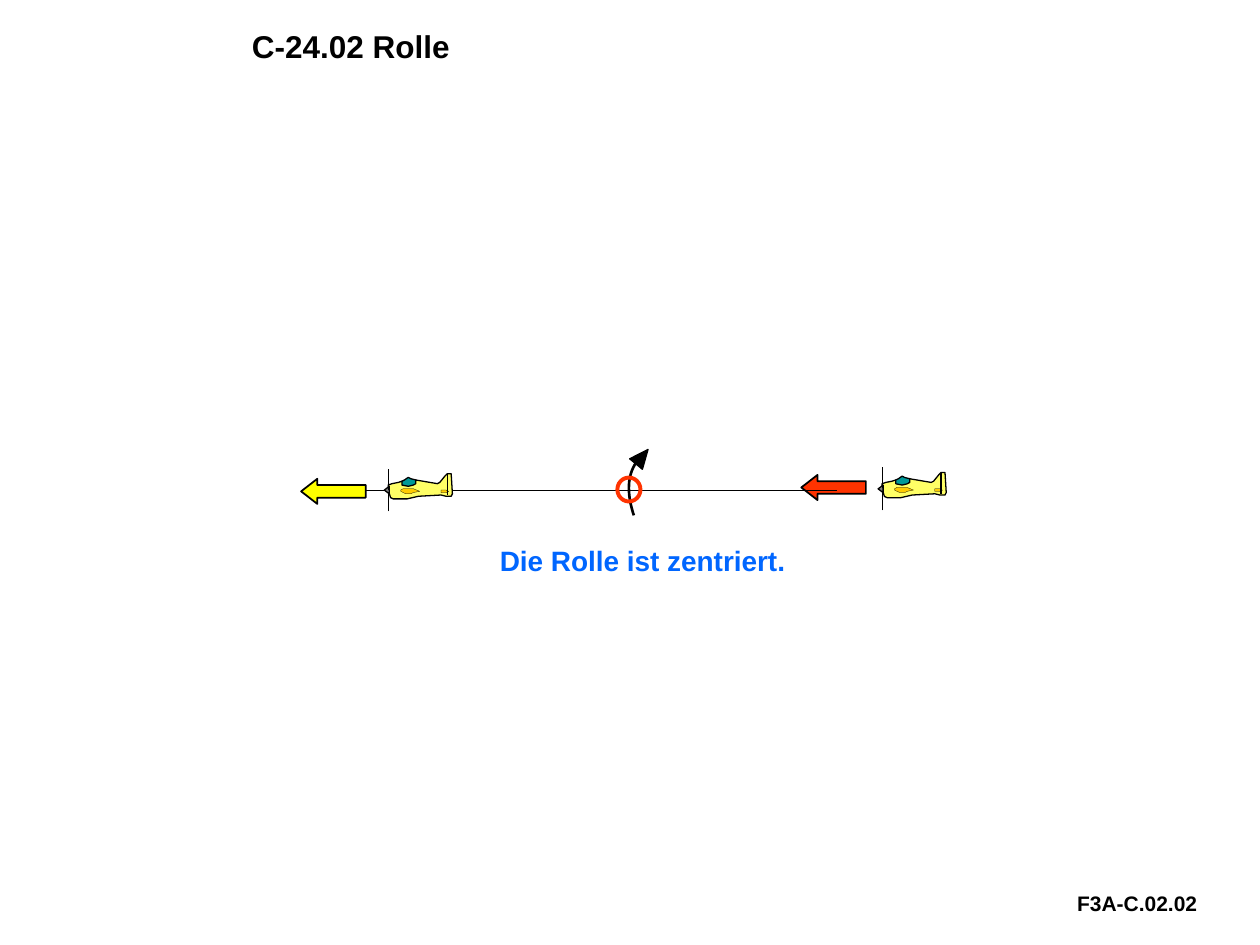
from lxml import etree
from pptx import Presentation
from pptx.dml.color import RGBColor
from pptx.enum.shapes import MSO_CONNECTOR, MSO_SHAPE
from pptx.enum.text import MSO_AUTO_SIZE
from pptx.oxml.ns import qn
from pptx.util import Pt

STRAIGHT = MSO_CONNECTOR.STRAIGHT
LEFT_ARROW = MSO_SHAPE.LEFT_ARROW
TRIANGLE = MSO_SHAPE.ISOSCELES_TRIANGLE
OVAL = MSO_SHAPE.OVAL
GROW = MSO_AUTO_SIZE.SHAPE_TO_FIT_TEXT

BLACK = RGBColor(0x00, 0x00, 0x00)
RED = RGBColor(0xFF, 0x33, 0x00)
YELLOW = RGBColor(0xFF, 0xFF, 0x00)
PALE_YELLOW = RGBColor(0xFF, 0xFF, 0x66)
GOLD = RGBColor(0xFF, 0xCC, 0x00)
TEAL = RGBColor(0x00, 0x99, 0x99)
GRAY = RGBColor(0x80, 0x80, 0x80)
BLUE = RGBColor(0x00, 0x66, 0xFF)

# Aircraft outlines in points, from the top of the propeller
FUSELAGE = [
    (7.9, 7.2), (5.8, 7.9), (2.2, 8.6), (0, 9.4), (0, 12.2), (0.7, 14.4),
    (1.4, 16.6), (2.9, 17.3), (10.8, 17.3), (17.3, 15.8), (30.2, 15.1),
    (33.1, 15.8), (36, 15.8), (36.7, 14.4), (36, 2.9), (33.8, 2.9),
    (32.4, 4.3), (29.5, 7.9), (28.1, 8.6), (15.8, 6.5), (15.1, 8.6),
    (10.8, 9.4), (8.6, 8.6),
]
CANOPY = [
    (15.8, 6.5), (15.8, 8.6), (14.4, 9.4), (11.5, 10.1), (7.9, 9.4),
    (7.9, 7.2), (9.4, 6.5), (11.5, 5), (13, 5.8),
]
WING = [
    (18, 13), (14.4, 11.5), (8.6, 11.5), (7.2, 12.2), (7.2, 13),
    (8.6, 13.7), (10.1, 14.4), (13, 14.4), (14.4, 13.7),
]
TAILPLANE = [(34.6, 13), (33.1, 13.7), (30.2, 13.7), (30.2, 12.2), (33.1, 12.2)]


def style(shape, fill, line, weight):
    shape.shadow.inherit = False
    if fill is None:
        shape.fill.background()
    else:
        shape.fill.solid()
        shape.fill.fore_color.rgb = fill
    shape.line.color.rgb = line
    shape.line.width = Pt(weight)
    return shape


def add_preset(page, kind, left, top, width, height, fill, line=BLACK, weight=0.75):
    shape = page.shapes.add_shape(kind, Pt(left), Pt(top), Pt(width), Pt(height))
    return style(shape, fill, line, weight)


def add_outline(page, left, top, points, fill, weight, close=True):
    places = [(Pt(left + x), Pt(top + y)) for x, y in points]
    builder = page.shapes.build_freeform(*places[0])
    builder.add_line_segments(places[1:], close=close)
    return style(builder.convert_to_shape(), fill, BLACK, weight)


def add_line(page, x1, y1, x2, y2):
    line = page.shapes.add_connector(STRAIGHT, Pt(x1), Pt(y1), Pt(x2), Pt(y2))
    line.line.color.rgb = BLACK
    line.line.width = Pt(0.75)
    etree.SubElement(line._element.spPr, qn("a:effectLst"))


def add_label(page, left, top, width, height, text, size, color, inset=(7.2, 3.6)):
    box = page.shapes.add_textbox(Pt(left), Pt(top), Pt(width), Pt(height))
    frame = box.text_frame
    frame.word_wrap = True
    frame.auto_size = GROW
    frame.margin_left = frame.margin_right = Pt(inset[0])
    frame.margin_top = frame.margin_bottom = Pt(inset[1])
    para = frame.paragraphs[0]
    para.text = text
    para.font.name = "Arial"
    para.font.size = Pt(size)
    para.font.bold = True
    para.font.color.rgb = color


def add_direction_arrow(page, left, top, fill):
    arrow = add_preset(page, LEFT_ARROW, left, top, 36.9, 14.4, fill, weight=1)
    arrow.adjustments[0] = 0.5
    arrow.adjustments[1] = 0.645


def add_aircraft(page, left, top):
    # Lower propeller blade, body and markings
    add_line(page, left + 0.4, top + 24.5, left + 0.4, top + 12.2)
    for points, fill, weight in (
        (FUSELAGE, PALE_YELLOW, 0.75),
        (CANOPY, TEAL, 0.75),
        (WING, GOLD, 0.13),
        (TAILPLANE, GOLD, 0.13),
    ):
        add_outline(page, left, top, points, fill, weight)
    # Rudder hinge, spinner and upper propeller blade
    add_line(page, left + 33.8, top + 15.1, left + 33.8, top + 2.9)
    spinner = add_preset(page, TRIANGLE, left - 2.9, top + 10.8, 4.3, 2.9, GRAY)
    spinner.rotation = 270
    add_line(page, left + 0.4, top + 12, left + 0.4, top)


def add_roll_arrow(page, left, top):
    # Cubic curve, sampled from tail to head
    controls = [(4, 38.9), (-0.3, 25.9), (0.4, 15.8), (5.4, 8.6)]
    steps = 16
    curve = []
    for step in range(steps + 1):
        t = step / steps
        weights = ((1 - t) ** 3, 3 * t * (1 - t) ** 2, 3 * t * t * (1 - t), t ** 3)
        curve.append(tuple(
            sum(weight * point[axis] for weight, point in zip(weights, controls))
            for axis in (0, 1)
        ))
    add_outline(page, left, top, curve, None, 1.5, close=False)
    head = add_preset(page, TRIANGLE, left + 4, top, 9.4, 10.8, BLACK)
    head.rotation = 39.5


def add_manoeuvre(page, left, top):
    # Entry on the right
    add_direction_arrow(page, left + 285.8, top + 4.3, RED)
    add_aircraft(page, left + 331.9, top)
    # Flight path with the roll at its centre
    add_line(page, left + 31, top + 13, left + 306, top + 13)
    add_roll_arrow(page, left + 186.1, top - 11.5)
    # Exit on the left
    add_aircraft(page, left + 49.7, top + 0.7)
    add_direction_arrow(page, left, top + 6.5, YELLOW)
    # Note and centre mark
    add_label(page, left + 106.5, top + 40.1, 211.7, 26.6,
              "Die Rolle ist zentriert.", 16, BLUE)
    add_preset(page, OVAL, left + 180.7, top + 5.8, 13.2, 13.7, None, RED, 2.25)


def main():
    deck = Presentation()
    deck.slide_width, deck.slide_height = Pt(720), Pt(540)
    page = deck.slides.add_slide(deck.slide_layouts[6])
    # Title and sheet number
    add_label(page, 137.5, 12.6, 470.9, 28.1, "C-24.02 Rolle", 18, BLACK, (6.5, 2.9))
    add_label(page, 608.4, 505.4, 95, 21.6, "F3A-C.02.02", 12, BLACK)
    add_manoeuvre(page, 172.1, 267.1)
    deck.save("out.pptx")


if __name__ == "__main__":
    main()
